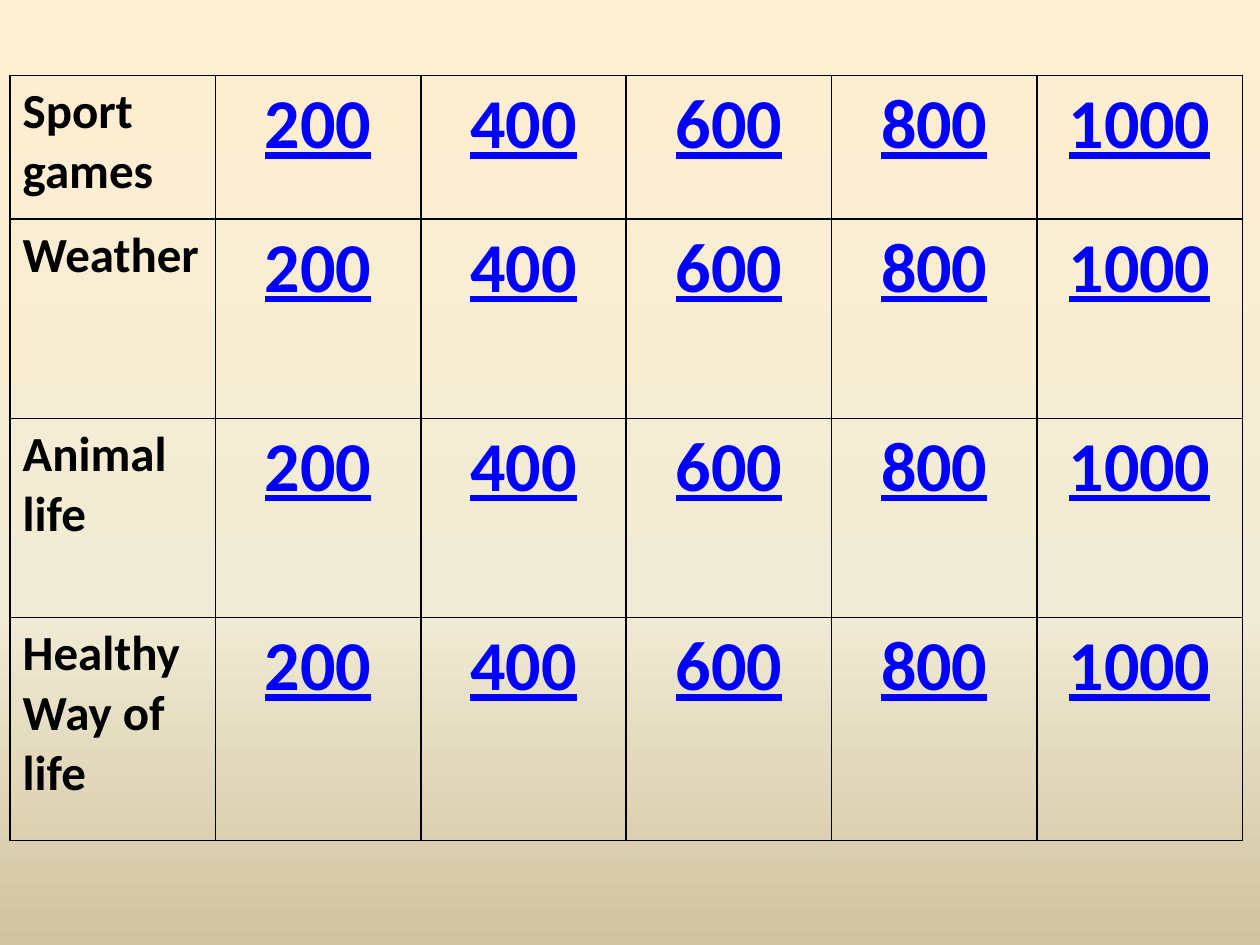
from lxml.etree import SubElement
from pptx import Presentation
from pptx.dml.color import RGBColor
from pptx.enum.text import MSO_ANCHOR, PP_ALIGN
from pptx.oxml.ns import qn
from pptx.util import Inches, Pt

# Content
TOPICS = ["Sport games", "Weather", "Animal life", "Healthy Way of life"]
POINTS = ["200", "400", "600", "800", "1000"]

# Layout, in inches
LEFT, TOP, COLUMN_WIDTH = 0.08, 0.6, 1.63
ROW_HEIGHTS = [1.14, 1.58, 1.58, 1.77]

THEME = {
    "font": "Calibri",
    "topic": {"size": 28, "color": "000000"},
    "points": {"size": 40, "color": "0000FF", "underline": True,
               "align": PP_ALIGN.CENTER},
    "border": {"color": "000000", "width": 1},
    "background": [(0, "FFEFD1"), (65, "F0EBD5"), (100, "D1C39F")],
}


def write(cell, text, size, color, underline=False, align=PP_ALIGN.LEFT):
    paragraph = cell.text_frame.paragraphs[0]
    paragraph.alignment = align
    run = paragraph.add_run()
    run.text = text
    run.font.name = THEME["font"]
    run.font.size = Pt(size)
    run.font.bold = True
    run.font.underline = underline
    run.font.color.rgb = RGBColor.from_string(color)


def add_color(parent, color):
    SubElement(SubElement(parent, qn("a:solidFill")), qn("a:srgbClr"), val=color)


def add_borders(cell, color, width):
    properties = cell._tc.get_or_add_tcPr()
    for side in ("lnL", "lnR", "lnT", "lnB"):
        border = SubElement(properties, qn(f"a:{side}"), w=str(Pt(width)))
        add_color(border, color)


def paint_background(slide, stops):
    fill = slide.background.fill
    fill.gradient()
    fill.gradient_angle = 270  # counter-clockwise: runs from top to bottom
    stop_list = next(slide.element.iter(qn("a:gsLst")))
    for old_stop in list(stop_list):
        stop_list.remove(old_stop)
    for percent, color in stops:
        stop = SubElement(stop_list, qn("a:gs"), pos=str(percent * 1000))
        SubElement(stop, qn("a:srgbClr"), val=color)


def main():
    deck = Presentation()
    deck.slide_width, deck.slide_height = Inches(10), Inches(7.5)
    slide = deck.slides.add_slide(deck.slide_layouts[6])
    paint_background(slide, THEME["background"])

    # Game board
    columns = 1 + len(POINTS)
    board = slide.shapes.add_table(
        len(TOPICS), columns, Inches(LEFT), Inches(TOP),
        Inches(COLUMN_WIDTH * columns), Inches(sum(ROW_HEIGHTS))).table
    board.first_row = board.horz_banding = False
    for column in board.columns:
        column.width = Inches(COLUMN_WIDTH)
    for row, height in zip(board.rows, ROW_HEIGHTS):
        row.height = Inches(height)

    # One topic per row, followed by its points
    for row, topic in zip(board.rows, TOPICS):
        for index, (cell, text) in enumerate(zip(row.cells, [topic, *POINTS])):
            write(cell, text, **THEME["points" if index else "topic"])
            cell.vertical_anchor = MSO_ANCHOR.TOP
            add_borders(cell, **THEME["border"])
            cell.fill.background()

    deck.save("out.pptx")


if __name__ == "__main__":
    main()
